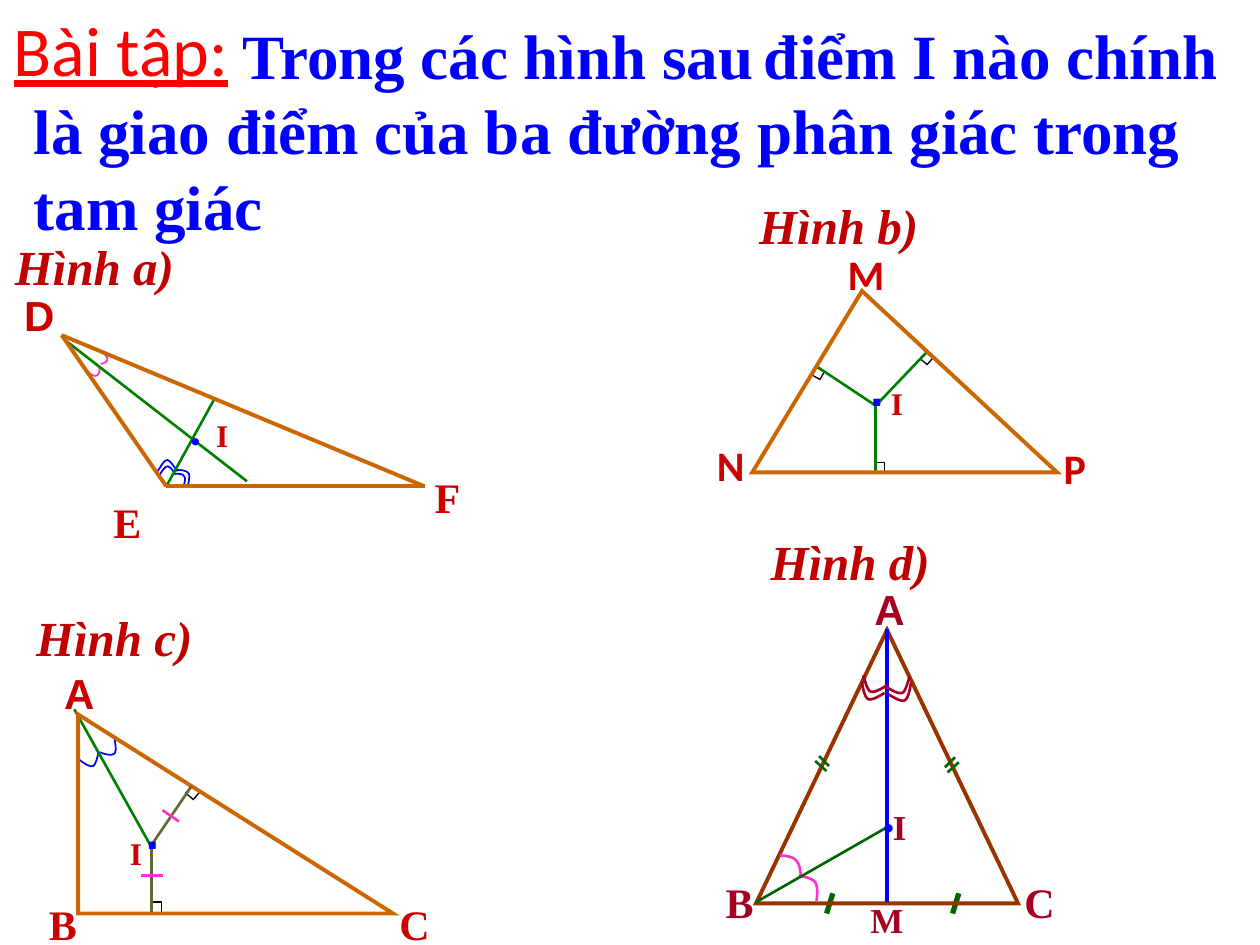
from dataclasses import dataclass

from lxml import etree
from pptx import Presentation, util as u
from pptx.dml.color import RGBColor
from pptx.enum import shapes, text
from pptx.oxml.ns import qn

LEFT, CENTER, RIGHT = text.PP_ALIGN.LEFT, text.PP_ALIGN.CENTER, text.PP_ALIGN.RIGHT
SHAPE = shapes.MSO_SHAPE


@dataclass(frozen=True)
class Theme:
    red: str = "FF0000"
    blue: str = "0000FF"
    caption: str = "C00000"
    vertex: str = "CC0000"
    wine: str = "A50021"
    edge: str = "CC6600"
    brown: str = "993300"
    green: str = "008000"
    dark_green: str = "006600"
    olive: str = "666633"
    pink: str = "FF33CC"
    black: str = "000000"
    white: str = "FFFFFF"
    serif: str = "Times New Roman"
    sans: str = "Arial"
    body: str = "Calibri"
    heading: int = 40
    title: int = 36
    gap: int = 24
    dot: int = 32
    head: int = 28
    big: int = 24
    mid: int = 20
    small: int = 18


def inch(value):
    """Convert inches to a Cm length."""
    return u.Cm(value * 2.54)


def mirror(points, axis=7.035, drop=0.01):
    """Reflect points across a vertical axis."""
    return [(2 * axis - x, y + drop) for x, y in points]


class Board:
    """Hold the theme and the slide being drawn."""

    def __init__(self, s, theme):
        """Keep the slide and its theme."""
        self.s, self.theme = s, theme

    def style(self, sp, color, width, fill=None):
        """Set outline and fill of a shape."""
        sp.shadow.inherit = False
        if fill:
            sp.fill.solid()
            sp.fill.fore_color.rgb = RGBColor.from_string(fill)
        else:
            sp.fill.background()
        if color:
            sp.line.color.rgb = RGBColor.from_string(color)
            sp.line.width = u.Pt(width)
        else:
            sp.line.fill.background()

    def text(self, parts, x, y, w, size, font, color, align=CENTER, bold=True, italic=False,
             underline=False, wrap=True, lines=1, spacing=None, indent=0):
        """Add a text box with (text, size) parts in one paragraph."""
        parts = [(parts, size)] if isinstance(parts, str) else parts
        h = 0.1 + lines * size * (spacing or 1) / 60
        sp = self.s.shapes.add_textbox(inch(x), inch(y), inch(w), inch(h))
        tf = sp.text_frame
        tf.word_wrap = wrap
        tf.auto_size = text.MSO_AUTO_SIZE.SHAPE_TO_FIT_TEXT
        p = tf.paragraphs[0]
        p.alignment = align
        if spacing:
            p.line_spacing = spacing
        props = p._p.get_or_add_pPr()
        if indent:
            props.set("indent", str(inch(indent)))
        before = etree.SubElement(props, qn("a:spcBef"))
        etree.SubElement(before, qn("a:spcPct")).set("val", "10000" if spacing else "50000")
        for words, points in parts:
            r = p.add_run()
            r.text = words
            r.font.size, r.font.name = u.Pt(points), font
            r.font.bold, r.font.italic, r.font.underline = bold, italic, underline
            r.font.color.rgb = RGBColor.from_string(color)

    def caption(self, words, x, y, w=1.75):
        """Add the name of a figure."""
        self.text(words, x, y, w, self.theme.head, self.theme.serif, self.theme.caption, italic=True)

    def square_dot(self, x, y):
        """Add a tight square point."""
        self.text(".", x, y, 0.42, self.theme.head, self.theme.sans, self.theme.blue, spacing=0.2)

    def line(self, start, end, color, width=1.5):
        """Add a straight line."""
        sp = self.s.shapes.add_connector(shapes.MSO_CONNECTOR.STRAIGHT,
                                         *map(inch, (*start, *end)))
        sp.line.color.rgb = RGBColor.from_string(color)
        sp.line.width = u.Pt(width)
        etree.SubElement(sp._element.spPr, qn("a:effectLst"))

    def shape(self, kind, x, y, w, h, color, width=2.25, rotation=0, fill=None, adjust=None):
        """Add a preset shape with mitred corners."""
        sp = self.s.shapes.add_shape(kind, *map(inch, (x, y, w, h)))
        sp.rotation = rotation
        if adjust is not None:
            sp.adjustments[0] = adjust
        self.style(sp, color, width, fill)
        join = etree.SubElement(sp._element.spPr.find(qn("a:ln")), qn("a:miter"))
        join.set("lim", "800000")

    def right_angle(self, x, y, size, rotation):
        """Add a right-angle mark."""
        self.shape(SHAPE.RECTANGLE, x, y, size, size, self.theme.black, 0.75, rotation)

    def arc(self, points, color, width=1, fill=None):
        """Add an open outline of cubic curves."""
        start, *rest = [tuple(map(inch, q)) for q in points]
        builder = self.s.shapes.build_freeform(*start)
        builder.add_line_segments(rest, close=False)
        sp = builder.convert_to_shape()
        outline = next(sp._element.iter(qn("a:path")))
        segments = outline.findall(qn("a:lnTo"))
        for i in range(0, len(segments), 3):
            curve = etree.SubElement(outline, qn("a:cubicBezTo"))
            for segment in segments[i:i + 3]:
                curve.append(segment[0])
                outline.remove(segment)
        self.style(sp, color, width, fill)


def figure_c(b, t):
    """Draw the right triangle ABC."""
    b.caption("Hình c) ", 0.08, 4.77)
    b.arc([(.79, 5.97), (.84, 5.99), (.89, 6), (.91, 5.98), (.93, 5.96), (.91, 5.88), (.91, 5.86)], t.blue)
    b.arc([(.63, 6.03), (.67, 6.06), (.71, 6.09), (.74, 6.08), (.76, 6.07), (.78, 5.99), (.78, 5.97)], t.blue)
    b.right_angle(1.2, 7.16, 0.08, 90)
    b.right_angle(1.49, 6.25, 0.08, 40.6)
    b.line((.59, 5.63), (1.2, 6.72), t.green)
    b.shape(SHAPE.RIGHT_TRIANGLE, .62, 5.67, 2.5, 1.58, t.edge)
    for name, x, y, font in (("A", .38, 5.25, t.sans), ("C", 3.04, 7.08, t.serif), ("B", .25, 7.08, t.serif)):
        b.text(name, x, y, 0.5, t.big, font, t.vertex)
    for end in ((1.2, 7.24), (1.52, 6.24)):
        b.line((1.2, 6.71), end, t.olive)
    b.line((1.12, 6.95), (1.29, 6.95), t.pink)
    b.line((1.29, 6.43), (1.42, 6.52), t.pink)
    b.text("I", 0.83, 6.57, 0.5, t.small, t.serif, t.vertex)
    b.square_dot(1, 6.62)


def figure_d(b, t):
    """Draw the isosceles triangle ABC with its median."""
    b.caption("Hình d) ", 5.92, 4.17)
    for x in (6.56, 7.56):
        b.line((x + .05, 7.09), (x, 7.25), t.dark_green, 3)
    b.shape(SHAPE.ISOSCELES_TRIANGLE, 6, 5, 2.08, 2.17, t.brown)
    b.arc([(6.34, 6.95), (6.39, 6.96), (6.44, 6.97), (6.47, 7), (6.49, 7.04), (6.49, 7.09), (6.48, 7.15)], t.pink, 1.5)
    b.arc([(6.19, 6.79), (6.24, 6.79), (6.3, 6.8), (6.32, 6.83), (6.35, 6.86), (6.35, 6.91), (6.36, 6.97)], t.pink, 1.5)
    for name, x, y, font in (("A", 6.81, 4.58, t.sans), ("C", 8, 6.91, t.serif), ("B", 5.62, 6.91, t.serif)):
        b.text(name, x, y, 0.5, t.big, font, t.wine)
    b.line((7.04, 4.99), (7.04, 7.16), t.blue, 2.25)
    for tick in ([(6.5, 6), (6.58, 6.08)], [(6.47, 6.04), (6.56, 6.12)]):
        b.line(*tick, t.dark_green)
        b.line(*mirror(tick, 7.04), t.dark_green)
    b.text("M", 6.79, 7.08, 0.5, t.mid, t.serif, t.wine)
    b.line((6, 7.16), (7.05, 6.56), t.dark_green)
    b.text("I", 6.89, 6.34, 0.5, t.mid, t.serif, t.wine)
    for curve in ([(7.04, 5.44), (6.99, 5.47), (6.94, 5.5), (6.91, 5.49), (6.88, 5.48), (6.86, 5.38), (6.85, 5.36)],
                  [(6.84, 5.41), (6.85, 5.47), (6.86, 5.53), (6.89, 5.55), (6.92, 5.56), (6.97, 5.53), (7.02, 5.5)]):
        b.arc(curve, t.wine, 1.5)
        b.arc(mirror(curve), t.wine, 1.5)
    b.text(".", 6.88, 6.11, 0.33, t.dot, t.body, t.blue, RIGHT)


def figure_b(b, t):
    """Draw triangle MNP with its perpendiculars."""
    for name, x, y in (("M", 6.63, 1.92), ("P", 8.31, 3.46), ("N", 5.58, 3.44)):
        b.text(name, x, y, 0.44, t.big, t.body, t.vertex)
    for x, y, rotation in ((7.32, 2.81, 41.1), (6.95, 3.67, 90), (6.46, 2.93, 29.3)):
        b.right_angle(x, y, 0.07, rotation)
    for end in ((6.95, 3.75), (7.35, 2.8), (6.47, 2.9)):
        b.line((6.95, 3.22), end, t.green)
    b.shape(SHAPE.ISOSCELES_TRIANGLE, 5.97, 2.31, 2.42, 1.44, t.edge, adjust=0.36)
    b.text("I", 6.9, 3, 0.44, t.small, t.serif, t.vertex)
    b.square_dot(6.75, 3.1)


def figure_a(b, t):
    """Draw triangle DEF with two bisectors."""
    d, e, f = (.49, 2.66), (1.32, 3.86), (3.37, 3.86)
    b.text("D", 0.08, 2.25, 0.45, t.big, t.sans, t.vertex, RIGHT)
    b.arc([(1.26, 3.79), (1.28, 3.74), (1.31, 3.7), (1.33, 3.7), (1.36, 3.7), (1.39, 3.77), (1.41, 3.79)], t.blue)
    b.shape(SHAPE.RECTANGLE, 1.39, 3.77, .08, .09, None, fill=t.white)
    b.arc([(1.39, 3.76), (1.42, 3.76), (1.45, 3.76), (1.46, 3.78), (1.48, 3.79), (1.46, 3.84), (1.46, 3.85)], t.blue, fill=t.white)
    b.arc([(1.25, 3.74), (1.28, 3.7), (1.3, 3.65), (1.33, 3.65), (1.35, 3.65), (1.39, 3.72), (1.41, 3.74)], t.blue)
    b.arc([(1.39, 3.73), (1.43, 3.73), (1.48, 3.73), (1.5, 3.76), (1.51, 3.78), (1.49, 3.85), (1.49, 3.87)], t.blue)
    b.arc([(.82, 2.8), (.84, 2.82), (.86, 2.84), (.85, 2.86), (.85, 2.88), (.82, 2.88), (.8, 2.89)], t.pink)
    b.arc([(.79, 2.91), (.79, 2.94), (.79, 2.97), (.77, 2.98), (.76, 2.99), (.73, 2.98), (.71, 2.96)], t.pink)
    for name, x, y in (("F", 3.3, 3.69), ("E", 0.77, 3.89)):
        b.text(name, x, y, 0.45, t.big, t.serif, t.vertex, RIGHT)
    b.line(e, (1.7, 3.17), t.green)
    b.line((.53, 2.71), (1.96, 3.82), t.green)
    for start, end in ((e, f), (e, d), (d, f)):
        b.line(start, end, t.edge, 2.25)
    b.text("I", 1.46, 3.25, 0.45, t.small, t.serif, t.vertex, RIGHT)
    b.text(".", 1.28, 3.1, 0.42, t.head, t.body, t.blue, RIGHT)


def main():
    """Build and save the slide."""
    prs = Presentation()
    prs.slide_width, prs.slide_height = u.Cm(25.4), u.Cm(19.05)
    t = Theme()
    b = Board(prs.slides.add_slide(prs.slide_layouts[6]), t)
    b.caption("Hình a) ", 0, 1.83, 1.5)
    b.text("Bài tập:", 0, 0, 1.92, t.heading, t.body, t.red, bold=False, underline=True, wrap=False)
    b.text([("Trong các hình sau", t.title), (" ", t.gap),
            ("điểm I nào chính là giao điểm của ba đường phân giác trong tam giác", t.title)],
           0.17, 0.08, 9.67, t.title, t.serif, t.blue, LEFT, lines=3, indent=1.66)
    b.caption("Hình b) ", 5.83, 1.5)
    for figure in (figure_c, figure_d, figure_b, figure_a):
        figure(b, t)
    prs.save("out.pptx")


if __name__ == "__main__":
    main()
